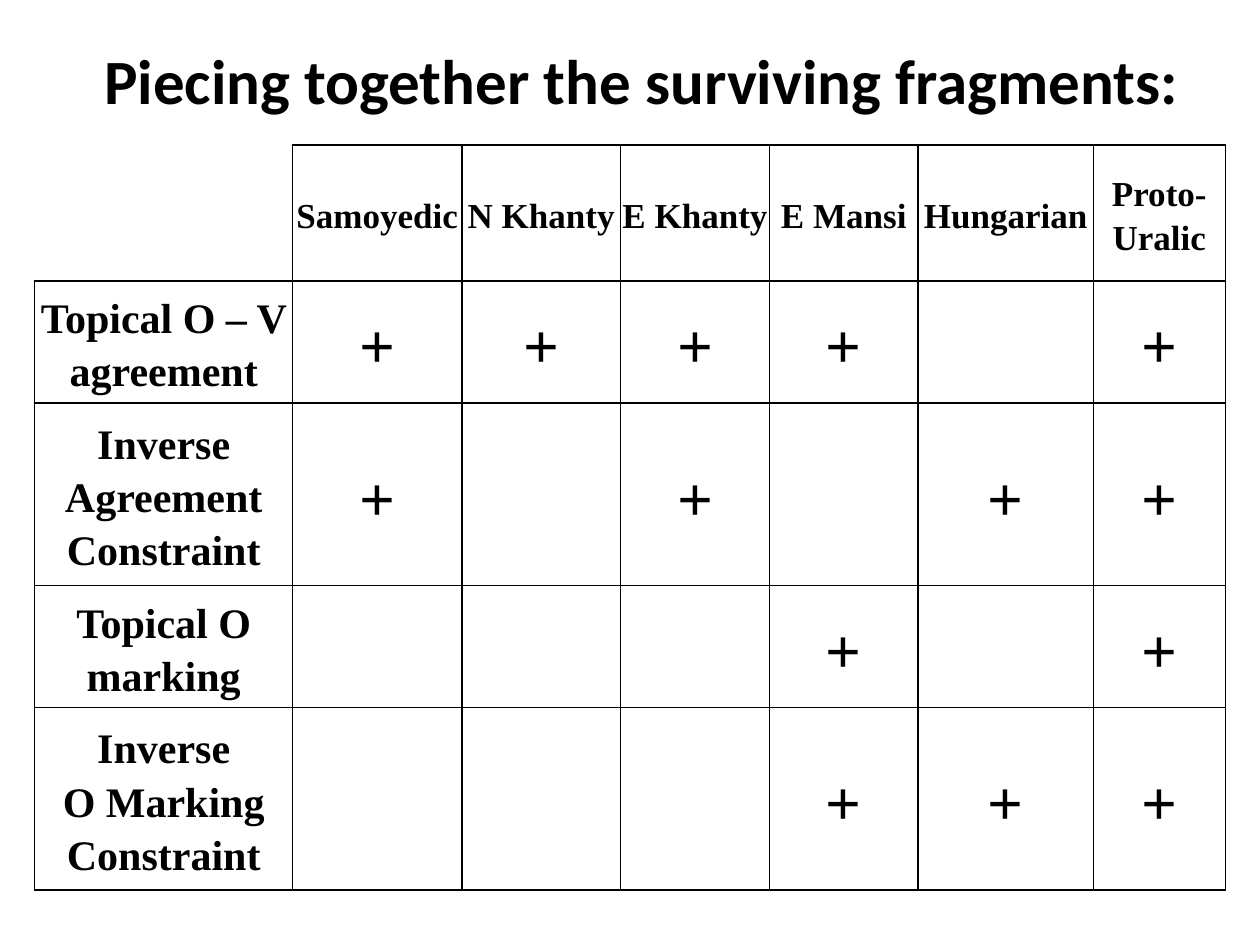
import pptx
import pptx.util
import pptx.dml.color
import pptx.enum.text
from lxml import etree
from pptx.oxml.ns import qn
from pptx.util import Cm, Pt

COLORS = {"ink": "000000", "paper": "FFFFFF"}
HEADERS = ["", "Samoyedic", "N Khanty", "E Khanty", "E Mansi", "Hungarian", "Proto-Uralic"]
FEATURES = [
    ("Topical O – V agreement", "++++ +"),
    ("Inverse Agreement Constraint", "+ + ++"),
    ("Topical O marking", "   + +"),
    ("Inverse\vO Marking Constraint", "   +++"),
]
COL_WIDTHS = [5.2, 3.41, 3.2, 3, 3, 3.53, 2.66]
ROW_HEIGHTS = [2.74, 2.46, 3.68, 2.46, 3.68]


def write(tf, text, size, font, bold=True, color="ink", spacing=None):
    """Fill a text frame with one centred paragraph; \\v breaks the line."""
    tf.word_wrap = True
    p = tf.paragraphs[0]
    p.alignment = pptx.enum.text.PP_ALIGN.CENTER
    if spacing:
        p.line_spacing = spacing
    for i, line in enumerate(text.split("\v")):
        if i:
            p.add_line_break()
        r = p.add_run()
        r.text = line
        r.font.size, r.font.name, r.font.bold = Pt(size), font, bold
        r.font.color.rgb = pptx.dml.color.RGBColor.from_string(COLORS[color])


def set_borders(cell, sides, width=1):
    """Draw the named sides (out of LRTB) and clear the others."""
    tcPr = cell._tc.get_or_add_tcPr()
    for side in "LRTB":
        ln = etree.SubElement(tcPr, qn("a:ln" + side), w=str(Pt(width)))
        if side in sides:
            fill = etree.SubElement(ln, qn("a:solidFill"))
            etree.SubElement(fill, qn("a:srgbClr"), val=COLORS["ink"])
        else:
            etree.SubElement(ln, qn("a:noFill"))


def add_title(s, text, left, top, width, height):
    sp = s.shapes.title
    sp.left, sp.top, sp.width, sp.height = Cm(left), Cm(top), Cm(width), Cm(height)
    sp.text_frame.vertical_anchor = pptx.enum.text.MSO_ANCHOR.MIDDLE
    write(sp.text_frame, text, 36, "Calibri")


def add_feature_table(s, left, top):
    """Languages across, features down, a plus where a feature survives."""
    rows = [HEADERS] + [[name, *marks] for name, marks in FEATURES]
    table = s.shapes.add_table(len(rows), len(HEADERS), Cm(left), Cm(top),
                               Cm(sum(COL_WIDTHS)), Cm(sum(ROW_HEIGHTS))).table
    table.first_row = table.horz_banding = False
    for col, width in zip(table.columns, COL_WIDTHS):
        col.width = Cm(width)
    for row, height in zip(table.rows, ROW_HEIGHTS):
        row.height = Cm(height)
    for i, texts in enumerate(rows):
        for j, text in enumerate(texts):
            cell = table.cell(i, j)
            set_borders(cell, "LRTB" if i or j else "RB")
            cell.fill.background()
            cell.vertical_anchor = pptx.enum.text.MSO_ANCHOR.MIDDLE
            cell.margin_left = cell.margin_right = cell.margin_top = Cm(0.03)
            cell.margin_bottom = 0
            if text.strip():
                size = 20 if i == 0 else 24 if j == 0 else 36
                write(cell.text_frame, text, size, "Times New Roman", spacing=1.15)


def main():
    prs = pptx.Presentation()
    prs.slide_width, prs.slide_height = Cm(25.4), Cm(19.05)
    s = prs.slides.add_slide(prs.slide_layouts[5])
    s.background.fill.solid()
    s.background.fill.fore_color.rgb = pptx.dml.color.RGBColor.from_string(COLORS["paper"])
    add_title(s, "Piecing together the surviving fragments:", 1.5, 0, 22.86, 3.18)
    add_feature_table(s, 0.7, 2.92)
    prs.save("out.pptx")


if __name__ == "__main__":
    main()
